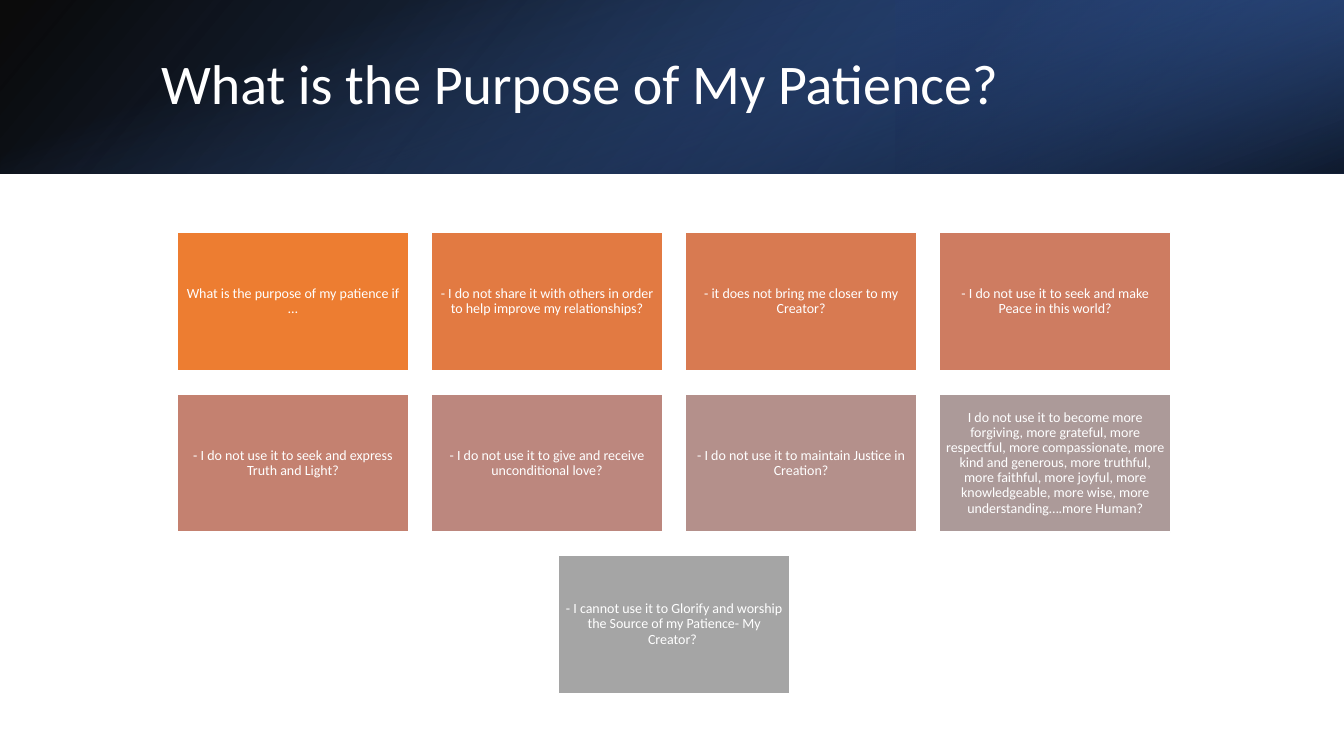
import lxml.etree
import pptx
import pptx.dml.color
import pptx.enum.shapes
import pptx.enum.text
import pptx.oxml.ns
import pptx.util

RGB = pptx.dml.color.RGBColor
WHITE = RGB(0xFF, 0xFF, 0xFF)
BLACK = RGB(0x00, 0x00, 0x00)
BLUE = RGB(0x44, 0x72, 0xC4)
DEEP_BLUE = RGB(0x2F, 0x55, 0x97)
NAVY = RGB(0x20, 0x38, 0x64)
CARD_COLOURS = [
    RGB(0xED, 0x7D, 0x31), RGB(0xE2, 0x7A, 0x42), RGB(0xD8, 0x7A, 0x51),
    RGB(0xCE, 0x7C, 0x61), RGB(0xC4, 0x81, 0x70), RGB(0xBC, 0x87, 0x7E),
    RGB(0xB4, 0x90, 0x8B), RGB(0xAC, 0x9A, 0x99), RGB(0xA5, 0xA5, 0xA5),
]
WIDTH, HEIGHT, BANNER = 13.33, 7.5, 1.72
COLUMNS = 4
QUESTIONS = [
    "What is the purpose of my patience if …",
    "- I do not share it with others in order to help improve my relationships?",
    "- it does not bring me closer to my Creator?",
    "- I do not use it to seek and make Peace in this world?",
    "- I do not use it to seek and express Truth and Light?",
    "- I do not use it to give and receive unconditional love?",
    "- I do not use it to maintain Justice in Creation?",
    "I do not use it to become more forgiving, more grateful, more respectful, "
    "more compassionate, more kind and generous, more truthful, more faithful, "
    "more joyful, more knowledgeable, more wise, more understanding….more Human?",
    "- I cannot use it to Glorify and worship the Source of my Patience- My Creator? ",
]


class PatienceSlide:
    """Holds the slide, its card grid and its text style."""

    font = "Calibri"
    left, top = 1.76, 2.31
    card_width, card_height = 2.29, 1.37
    column_gap, row_gap = 0.23, 0.23

    def __init__(self, deck):
        self.slide = deck.slides.add_slide(deck.slide_layouts[6])

    def rectangle(self, *bounds):
        shape = self.slide.shapes.add_shape(
            pptx.enum.shapes.MSO_SHAPE.RECTANGLE, *map(pptx.util.Inches, bounds))
        shape.shadow.inherit = False
        return shape

    def wording(self, frame, words, size, alignment):
        frame.word_wrap = True
        frame.vertical_anchor = pptx.enum.text.MSO_ANCHOR.MIDDLE
        paragraph = frame.paragraphs[0]
        paragraph.alignment = alignment
        paragraph.line_spacing = 0.9
        run = paragraph.add_run()
        run.text = words
        run.font.name = self.font
        run.font.size = pptx.util.Pt(size)
        run.font.color.rgb = WHITE

    def glow(self, bounds, stops, angle, rotation=0, flipped=False):
        band = self.rectangle(*bounds)
        band.rotation = rotation
        band.line.fill.background()
        band.fill.gradient()
        band.fill.gradient_angle = 360 - angle
        for stop, (position, colour, _) in zip(band.fill.gradient_stops, stops):
            stop.position = position / 100
            stop.color.rgb = colour
        properties = band._element.spPr
        if flipped:
            properties.find(pptx.oxml.ns.qn("a:xfrm")).set("flipH", "1")
        tints = properties.iter(pptx.oxml.ns.qn("a:srgbClr"))
        for tint, (_, _, opacity) in zip(tints, stops):
            alpha = lxml.etree.SubElement(tint, pptx.oxml.ns.qn("a:alpha"))
            alpha.set("val", str(opacity * 1000))

    def title(self, words):
        bounds = map(pptx.util.Inches, (1.5, 0.38, 10.98, 0.96))
        frame = self.slide.shapes.add_textbox(*bounds).text_frame
        self.wording(frame, words, 40, pptx.enum.text.PP_ALIGN.LEFT)

    def card(self, column, row, colour, question):
        card = self.rectangle(
            self.left + column * (self.card_width + self.column_gap),
            self.top + row * (self.card_height + self.row_gap),
            self.card_width, self.card_height)
        card.fill.solid()
        card.fill.fore_color.rgb = colour
        card.line.color.rgb = WHITE
        card.line.width = pptx.util.Pt(1)
        frame = card.text_frame
        inset = pptx.util.Inches(0.04)
        frame.margin_left = frame.margin_right = inset
        frame.margin_top = frame.margin_bottom = inset
        self.wording(frame, question, 10, pptx.enum.text.PP_ALIGN.CENTER)


def main():
    deck = pptx.Presentation()
    deck.slide_width = pptx.util.Inches(WIDTH)
    deck.slide_height = pptx.util.Inches(HEIGHT)
    page = PatienceSlide(deck)

    page.glow((0, 0, WIDTH, BANNER),
              [(0, BLACK, 96), (100, DEEP_BLUE, 100)], 140, flipped=True)
    page.glow((WIDTH * 2 / 3, 0, WIDTH / 3, BANNER),
              [(19, NAVY, 68), (100, BLUE, 79)], 320, rotation=180, flipped=True)
    offset = (WIDTH - BANNER) / 2
    page.glow((offset, -offset, BANNER, WIDTH),
              [(23, BLUE, 0), (99, BLACK, 74)], 340, rotation=90)
    page.title("What is the Purpose of My Patience?")

    for index, (colour, question) in enumerate(zip(CARD_COLOURS, QUESTIONS)):
        row, column = divmod(index, COLUMNS)
        cards_in_row = min(COLUMNS, len(QUESTIONS) - row * COLUMNS)
        page.card(column + (COLUMNS - cards_in_row) / 2, row, colour, question)

    deck.save("out.pptx")


if __name__ == "__main__":
    main()
